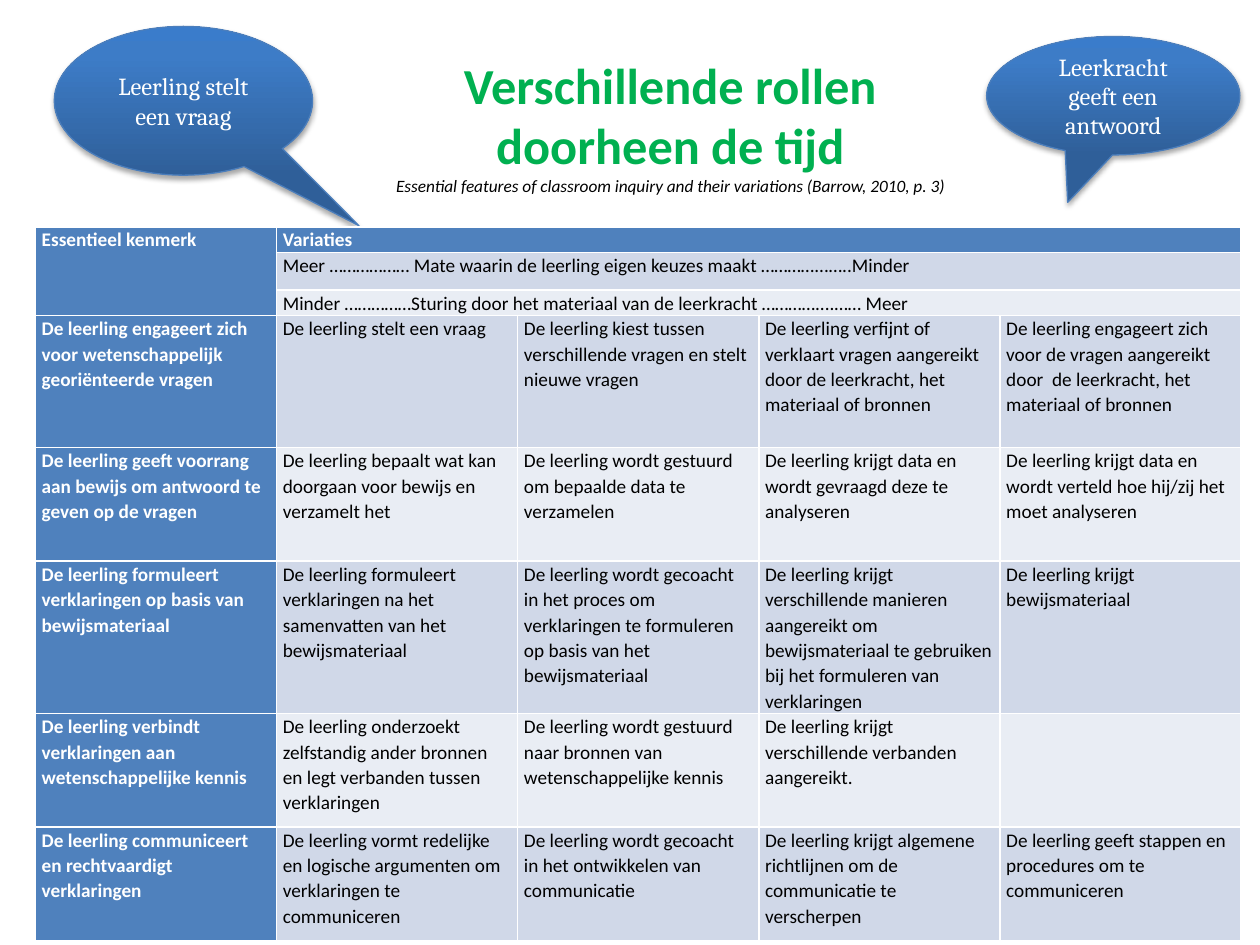
"""Build the slide on how pupil and teacher roles in inquiry shift over time."""
from copy import deepcopy

from pptx import Presentation
from pptx.dml.color import RGBColor
from pptx.enum.shapes import MSO_SHAPE as SHAPE
from pptx.enum.text import MSO_ANCHOR as ANCHOR, MSO_AUTO_SIZE as AUTO_SIZE, PP_ALIGN as ALIGN
from pptx.oxml.ns import qn
from pptx.util import Pt

WHITE = RGBColor(0xFF, 0xFF, 0xFF)
BLACK = RGBColor(0x00, 0x00, 0x00)
GREEN = RGBColor(0x00, 0xB0, 0x50)
HEADER_BLUE = RGBColor(0x4F, 0x81, 0xBD)
BAND_DARK = RGBColor(0xD0, 0xD8, 0xE8)
BAND_LIGHT = RGBColor(0xE9, 0xED, 0xF4)
CALLOUT_LINE = RGBColor(0x4B, 0x7E, 0xBC)
CALLOUT_STOPS = [
    (0, RGBColor(0x2F, 0x5F, 0x99)),
    (0.8, RGBColor(0x3D, 0x7C, 0xC7)),
    (1, RGBColor(0x3A, 0x7C, 0xCB)),
]

CALLOUTS = [
    ("Leerkracht geeft een antwoord", (563.8, 20.9, 144.7, 67.7), (-0.18, 0.9)),
    ("Leerling stelt een vraag", (31, 15.1, 147.6, 85), (0.68, 0.84)),
]
ROWS = [
    ["Essentieel kenmerk", "Variaties"],
    ["", "Meer ……………… Mate waarin de leerling eigen keuzes maakt …………...…..Minder"],
    ["", "Minder ……………Sturing door het materiaal van de leerkracht …………....…… Meer"],
    ["De leerling engageert zich voor wetenschappelijk georiënteerde vragen",
     "De leerling stelt een vraag",
     "De leerling kiest tussen verschillende vragen en stelt nieuwe vragen",
     "De leerling verfijnt of verklaart vragen aangereikt door de leerkracht, het materiaal of bronnen",
     "De leerling engageert zich voor de vragen aangereikt door  de leerkracht, het materiaal of bronnen"],
    ["De leerling geeft voorrang aan bewijs om antwoord te geven op de vragen",
     "De leerling bepaalt wat kan doorgaan voor bewijs en verzamelt het",
     "De leerling wordt gestuurd om bepaalde data te verzamelen",
     "De leerling krijgt data en wordt gevraagd deze te analyseren",
     "De leerling krijgt data en wordt verteld hoe hij/zij het moet analyseren"],
    ["De leerling formuleert verklaringen op basis van bewijsmateriaal",
     "De leerling formuleert verklaringen na het samenvatten van het bewijsmateriaal",
     "De leerling wordt gecoacht in het proces om verklaringen te formuleren op basis van het bewijsmateriaal",
     "De leerling krijgt verschillende manieren aangereikt om bewijsmateriaal te gebruiken "
     "bij het formuleren van verklaringen",
     "De leerling krijgt bewijsmateriaal"],
    ["De leerling verbindt verklaringen aan wetenschappelijke kennis",
     "De leerling onderzoekt zelfstandig ander bronnen en legt verbanden tussen verklaringen",
     "De leerling wordt gestuurd naar bronnen van wetenschappelijke kennis",
     "De leerling krijgt verschillende verbanden aangereikt."],
    ["De leerling communiceert en rechtvaardigt verklaringen",
     "De leerling vormt redelijke en logische argumenten om verklaringen te communiceren",
     "De leerling wordt gecoacht in het ontwikkelen van communicatie",
     "De leerling krijgt algemene richtlijnen om de communicatie te verscherpen",
     "De leerling geeft stappen en procedures om te communiceren"],
]
ROW_HEIGHTS = [11.5, 21.6, 11.5, 75.6, 64.8, 86.4, 64.8, 64.8]
COLUMN_COUNT = 5
COLUMN_WIDTH = 137.8


def format_run(run, font_name, size, color, bold=False, italic=False):
    font = run.font
    font.name = font_name
    font.size = Pt(size)
    font.color.rgb = color
    font.bold = bold
    font.italic = italic


prs = Presentation()
prs.slide_width, prs.slide_height = Pt(720), Pt(540)
slide = prs.slides.add_slide(prs.slide_layouts[5])

title = slide.shapes.title
title.left, title.top, title.width, title.height = Pt(178.6), Pt(20.9), Pt(409), Pt(100.8)
heading = title.text_frame
heading.text = (
    "Verschillende rollen\vdoorheen de tijd\v"
    "Essential features of classroom inquiry and their variations (Barrow, 2010, p. 3)"
)
heading.auto_size = AUTO_SIZE.NONE
heading.vertical_anchor = ANCHOR.MIDDLE
heading.paragraphs[0].alignment = ALIGN.CENTER
*heading_lines, source_line = heading.paragraphs[0].runs
for line in heading_lines:
    format_run(line, "Calibri", 28.8, GREEN, bold=True)
format_run(source_line, "Calibri", 9.9, BLACK, italic=True)

for speech, bounds, tail in CALLOUTS:
    callout = slide.shapes.add_shape(SHAPE.OVAL_CALLOUT, *map(Pt, bounds))
    callout.adjustments[0], callout.adjustments[1] = tail
    callout.fill.gradient()
    callout.fill.gradient_angle = 90
    stop_list = callout.element.spPr.find(qn("a:gradFill")).find(qn("a:gsLst"))
    stop_list.append(deepcopy(stop_list[-1]))
    for stop, (position, color) in zip(callout.fill.gradient_stops, CALLOUT_STOPS):
        stop.position = position
        stop.color.rgb = color
    callout.line.color.rgb = CALLOUT_LINE
    callout.line.width = Pt(0.75)
    callout.text_frame.text = speech
    callout.text_frame.word_wrap = True
    callout.text_frame.vertical_anchor = ANCHOR.MIDDLE
    callout.text_frame.paragraphs[0].alignment = ALIGN.CENTER
    format_run(callout.text_frame.paragraphs[0].runs[0], "Cambria", 14, WHITE)

variations = slide.shapes.add_table(
    len(ROWS), COLUMN_COUNT, Pt(20.2), Pt(129.6),
    Pt(COLUMN_WIDTH * COLUMN_COUNT), Pt(sum(ROW_HEIGHTS)),
).table
variations.first_col = True
for column in variations.columns:
    column.width = Pt(COLUMN_WIDTH)
for row, height in zip(variations.rows, ROW_HEIGHTS):
    row.height = Pt(height)

variations.cell(0, 0).merge(variations.cell(2, 0))
for r in range(3):
    variations.cell(r, 1).merge(variations.cell(r, COLUMN_COUNT - 1))

for r, texts in enumerate(ROWS):
    for c in range(COLUMN_COUNT):
        cell = variations.cell(r, c)
        is_header = r == 0 or c == 0
        cell.fill.solid()
        cell.fill.fore_color.rgb = HEADER_BLUE if is_header else BAND_DARK if r % 2 else BAND_LIGHT
        cell.margin_left = cell.margin_right = Pt(3.6)
        cell.margin_top = cell.margin_bottom = Pt(0)
        if c < len(texts) and texts[c]:
            cell.text_frame.text = texts[c]
            paragraph = cell.text_frame.paragraphs[0]
            paragraph.line_spacing = 1.07
            format_run(paragraph.runs[0], "Calibri", 11, WHITE if is_header else BLACK, bold=is_header)
        else:
            cell.text_frame.paragraphs[0].font.size = Pt(11)

prs.save("out.pptx")
